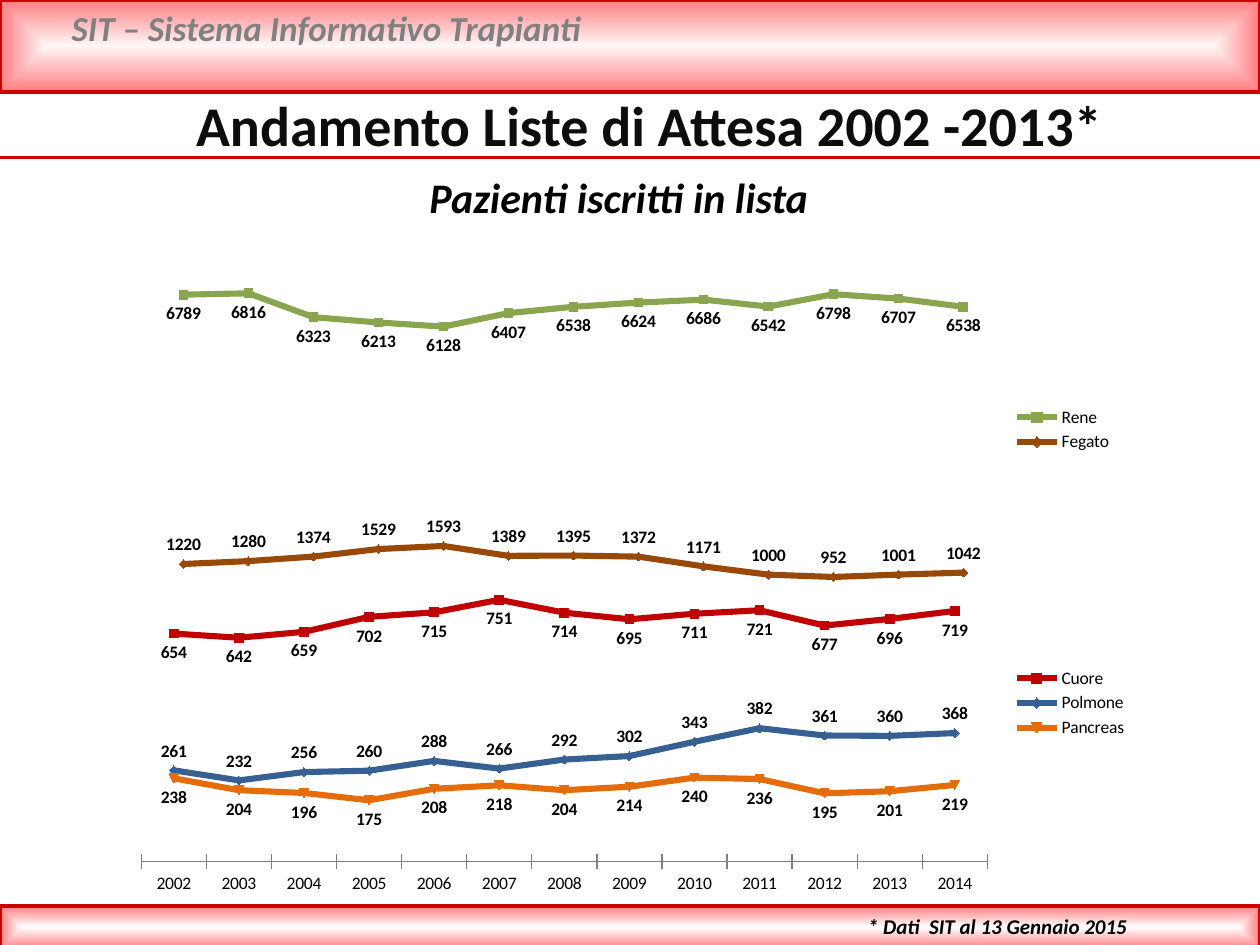
from lxml import etree
from pptx import Presentation
from pptx.chart.data import CategoryChartData
from pptx.dml.color import RGBColor
from pptx.enum.chart import (XL_CHART_TYPE, XL_LABEL_POSITION as Pos, XL_LEGEND_POSITION,
                             XL_MARKER_STYLE, XL_TICK_MARK)
from pptx.enum.shapes import MSO_CONNECTOR, MSO_SHAPE
from pptx.enum.text import PP_ALIGN
from pptx.oxml import parse_xml
from pptx.oxml.ns import nsdecls, qn
from pptx.util import Inches, Pt

FONT = "Calibri"
BLACK = RGBColor(0x00, 0x00, 0x00)
NEAR_BLACK = RGBColor(0x0D, 0x0D, 0x0D)
WHITE = RGBColor(0xFF, 0xFF, 0xFF)
GREY = RGBColor(0x80, 0x80, 0x80)
RED = RGBColor(0xCC, 0x00, 0x00)
PINK = RGBColor(0xFF, 0x7C, 0x80)
PALE_PINK = RGBColor(0xFF, 0xF6, 0xF6)
GREEN = RGBColor(0x89, 0xA5, 0x4E)
BROWN = RGBColor(0x98, 0x48, 0x07)
DARK_RED = RGBColor(0xC0, 0x00, 0x00)
BLUE = RGBColor(0x37, 0x60, 0x92)
ORANGE = RGBColor(0xE4, 0x6C, 0x0A)

YEARS = [str(year) for year in range(2002, 2015)]
# Each series: name, values, colour, label position
THORACIC = [
    ("Cuore", [654, 642, 659, 702, 715, 751, 714, 695, 711, 721, 677, 696, 719],
     DARK_RED, Pos.BELOW),
    ("Polmone", [261, 232, 256, 260, 288, 266, 292, 302, 343, 382, 361, 360, 368],
     BLUE, Pos.ABOVE),
    ("Pancreas", [238, 204, 196, 175, 208, 218, 204, 214, 240, 236, 195, 201, 219],
     ORANGE, Pos.BELOW),
]
ABDOMINAL = [
    ("Rene", [6789, 6816, 6323, 6213, 6128, 6407, 6538, 6624, 6686, 6542, 6798, 6707, 6538],
     GREEN, Pos.BELOW),
    ("Fegato", [1220, 1280, 1374, 1529, 1593, 1389, 1395, 1372, 1171, 1000, 952, 1001, 1042],
     BROWN, Pos.ABOVE),
]


def set_format(target, fmt):
    for name, value in fmt.items():
        setattr(target, name, value)


def add_band(s, top, height, centre):
    """Full-width red-edged band that fades from its centre to pink."""
    sp = s.shapes.add_shape(MSO_SHAPE.RECTANGLE, 0, Inches(top), Inches(10), Inches(height))
    sp.shadow.inherit = False
    sp.line.color.rgb = RED
    sp.line.width = Pt(2)
    sp._element.spPr.find(qn("a:prstGeom")).addnext(parse_xml(
        f'<a:gradFill {nsdecls("a")} rotWithShape="1"><a:gsLst>'
        f'<a:gs pos="0"><a:srgbClr val="{centre}"/></a:gs>'
        f'<a:gs pos="100000"><a:srgbClr val="{PINK}"/></a:gs></a:gsLst>'
        '<a:path path="shape"><a:fillToRect l="50000" t="50000" r="50000" b="50000"/>'
        '</a:path></a:gradFill>'))


def add_rule(s, top):
    line = s.shapes.add_connector(MSO_CONNECTOR.STRAIGHT, 0, Inches(top), Inches(10), Inches(top))
    line.line.color.rgb = RED
    line.line.width = Pt(2)
    etree.SubElement(line._element.spPr, qn("a:effectLst"))


def add_text(s, text, box, size, color, italic=True, align=PP_ALIGN.LEFT):
    tf = s.shapes.add_textbox(*map(Inches, box)).text_frame
    tf.word_wrap = True
    p = tf.paragraphs[0]
    p.alignment = align
    r = p.add_run()
    r.text = text
    set_format(r.font, {"name": FONT, "size": Pt(size), "bold": True, "italic": italic})
    r.font.color.rgb = color


def style_series(series, color, position):
    series.smooth = False
    series.format.line.width = Pt(3.5)
    series.format.line.color.rgb = color
    set_format(series.marker, {"style": XL_MARKER_STYLE.AUTOMATIC, "size": 5})
    series.marker.format.fill.solid()
    series.marker.format.fill.fore_color.rgb = color
    series.marker.format.line.color.rgb = color
    labels = series.data_labels
    set_format(labels, {"show_value": True, "position": position})
    set_format(labels.font, {"name": FONT, "size": Pt(10), "bold": True})
    labels.font.color.rgb = BLACK


def set_plot_layout(chart, layout):
    """Place the inner plot area, as fractions of the chart."""
    plot_area = chart._chartSpace.chart.plotArea
    for old in plot_area.findall(qn("c:layout")):
        plot_area.remove(old)
    sizes = "".join(f'<c:{k} val="{v}"/>' for k, v in zip("xywh", layout))
    plot_area.insert(0, parse_xml(
        f'<c:layout {nsdecls("c")}><c:manualLayout><c:layoutTarget val="inner"/>'
        f'<c:xMode val="edge"/><c:yMode val="edge"/>{sizes}</c:manualLayout></c:layout>'))


def add_trend_chart(s, rows, box, layout, maximum, major, show_years):
    data = CategoryChartData()
    data.categories = YEARS
    for name, values, _, _ in rows:
        data.add_series(name, values)
    chart = s.shapes.add_chart(XL_CHART_TYPE.LINE_MARKERS, *map(Inches, box), data).chart
    set_format(chart, {"has_title": False, "has_legend": True})
    set_format(chart.font, {"name": FONT, "size": Pt(10)})
    chart.font.color.rgb = BLACK
    set_format(chart.legend, {"position": XL_LEGEND_POSITION.RIGHT, "include_in_layout": False})
    chart.plots[0].vary_by_categories = False
    set_format(chart.value_axis, {"minimum_scale": 0, "maximum_scale": maximum,
                                  "major_unit": major, "has_major_gridlines": False,
                                  "visible": False})
    axis = chart.category_axis
    set_format(axis, {"visible": show_years, "major_tick_mark": XL_TICK_MARK.CROSS})
    axis.format.line.color.rgb = GREY
    for series, (_, _, color, position) in zip(chart.plots[0].series, rows):
        style_series(series, color, position)
    set_plot_layout(chart, layout)
    chart._chartSpace.chart.addnext(parse_xml(
        f'<c:spPr {nsdecls("c", "a")}><a:noFill/><a:ln><a:noFill/></a:ln></c:spPr>'))


def main():
    prs = Presentation()
    prs.slide_width, prs.slide_height = Inches(10), Inches(7.5)
    s = prs.slides.add_slide(prs.slide_layouts[6])

    add_band(s, 0, 0.73, PALE_PINK)
    add_text(s, "SIT – Sistema Informativo Trapianti", (0.47, 0, 8.98, 0.44), 20, GREY)
    add_band(s, 7.19, 0.34, WHITE)
    add_rule(s, 1.25)
    add_text(s, "* Dati  SIT al 13 Gennaio 2015", (6.79, 7.2, 3.21, 0.3), 12, BLACK)

    add_trend_chart(s, THORACIC, (0.96, 4.01, 8.09, 3.14), (0.02, 0.02, 0.83, 0.88),
                    1000, 200, True)
    add_text(s, "Andamento Liste di Attesa 2002 -2013*", (1.14, 0.67, 8.03, 0.64), 32,
             NEAR_BLACK, italic=False, align=PP_ALIGN.CENTER)
    add_text(s, "Pazienti iscritti in lista", (2.8, 1.31, 4.22, 0.51), 24, BLACK,
             align=PP_ALIGN.CENTER)
    add_trend_chart(s, ABDOMINAL, (1.04, 1.81, 7.89, 3.2), (0.02, 0.02, 0.85, 0.96),
                    8000, 1000, False)
    prs.save("out.pptx")


if __name__ == "__main__":
    main()
